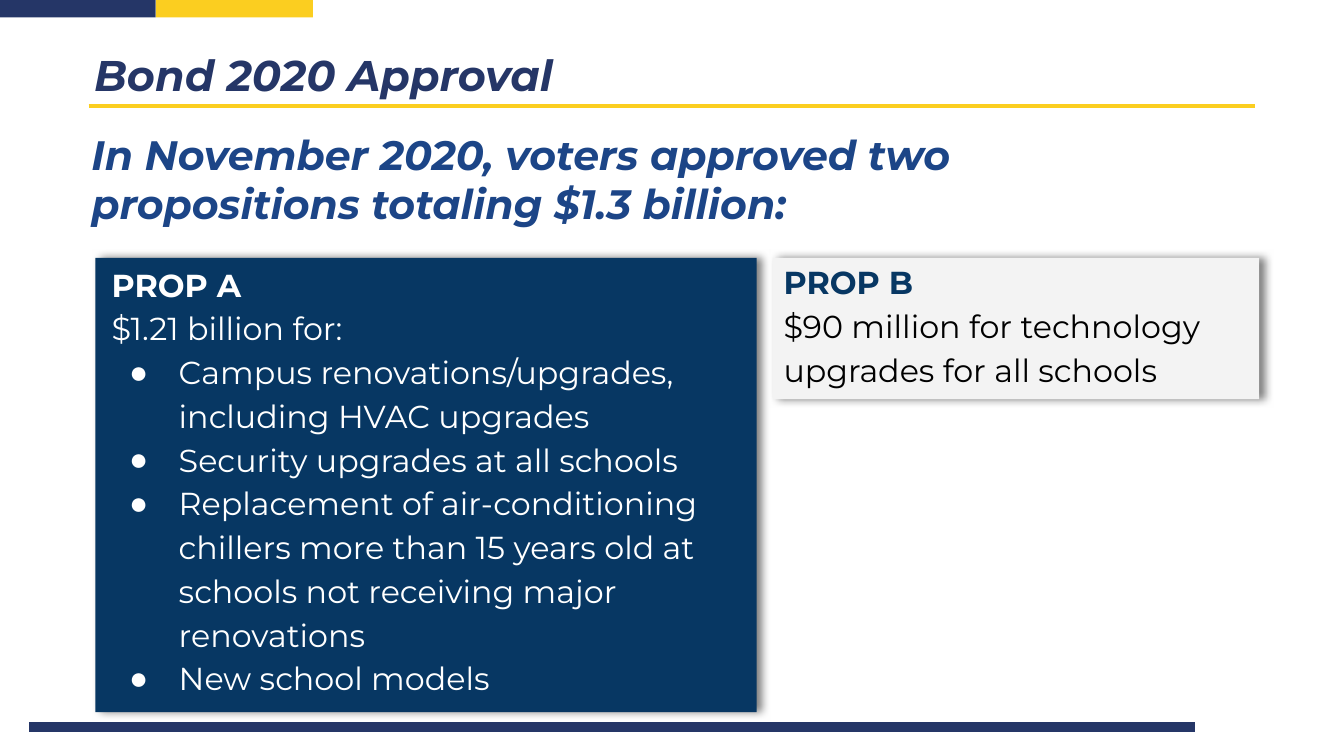
from lxml import etree
from pptx import Presentation
from pptx.dml.color import RGBColor
from pptx.enum.shapes import MSO_CONNECTOR, MSO_SHAPE
from pptx.enum.text import MSO_ANCHOR, MSO_AUTO_SIZE, PP_ALIGN
from pptx.oxml.ns import qn
from pptx.util import Pt

RECTANGLE = MSO_SHAPE.RECTANGLE
STRAIGHT = MSO_CONNECTOR.STRAIGHT
TOP, MIDDLE = MSO_ANCHOR.TOP, MSO_ANCHOR.MIDDLE
NO_AUTOFIT = MSO_AUTO_SIZE.NONE
LEFT = PP_ALIGN.LEFT

FONT = "Montserrat"
INDIGO, YELLOW, BLUE = "253667", "FBCE20", "1C4587"
NAVY, PALE, WHITE, BLACK = "073763", "F3F3F3", "FFFFFF", "000000"


def color(value):
    return RGBColor.from_string(value)


def add_paragraph(frame, text, size, value, bold=False, italic=False, spacing=1.0, bullet=False):
    """Fill the frame's empty first paragraph, or append another one."""
    para = frame.paragraphs[0]
    if para.runs:
        para = frame.add_paragraph()
    para.alignment = LEFT
    para.line_spacing = spacing
    para.space_before = Pt(0)
    properties = para._p.get_or_add_pPr()
    properties.set("marL", str(Pt(36 if bullet else 0)))
    properties.set("indent", str(Pt(-26.6 if bullet else 0)))
    if bullet:
        bullet_color = etree.SubElement(properties, qn("a:buClr"))
        etree.SubElement(bullet_color, qn("a:srgbClr"), val=value)
        etree.SubElement(properties, qn("a:buChar"), char="●")
    else:
        etree.SubElement(properties, qn("a:buNone"))
    span = para.add_run()
    span.text = text
    span.font.name = FONT
    span.font.size = Pt(size)
    span.font.bold = bold
    span.font.italic = italic
    span.font.color.rgb = color(value)


deck = Presentation()
deck.slide_width, deck.slide_height = Pt(720), Pt(405)
page = deck.slides.add_slide(deck.slide_layouts[1])
title, prop_a = page.placeholders

# Footer bar and title underline
for left, right, top, width, value in [(15.8, 640, 389.5, 5, INDIGO), (47.5, 672.5, 56.9, 2, YELLOW)]:
    rule = page.shapes.add_connector(STRAIGHT, Pt(left), Pt(top), Pt(right), Pt(top))
    rule.line.color.rgb = color(value)
    rule.line.width = Pt(width)
    etree.SubElement(rule._element.spPr, qn("a:effectLst"))

# Corner bands, then the two proposition cards with a soft shadow
for left, top, width, height, value, shadowed in [
    (-0.7, 0, 84.2, 9.4, INDIGO, False),
    (83.5, 0, 84.2, 9.4, YELLOW, False),
    (414, 138.2, 260.6, 75.6, PALE, True),
    (51.1, 138.2, 354.2, 243.4, NAVY, True),
]:
    block = page.shapes.add_shape(RECTANGLE, Pt(left), Pt(top), Pt(width), Pt(height))
    block.shadow.inherit = False
    block.fill.solid()
    block.fill.fore_color.rgb = color(value)
    block.line.fill.background()
    if shadowed:
        effects = block._element.spPr.find(qn("a:effectLst"))
        shadow = etree.SubElement(effects, qn("a:outerShdw"), blurRad=str(Pt(4.5)),
                                  dist=str(Pt(3)), dir="0", algn="bl", rotWithShape="0")
        shade = etree.SubElement(shadow, qn("a:srgbClr"), val=BLACK)
        etree.SubElement(shade, qn("a:alpha"), val="50000")

# Text boxes stand in front of the cards
heading = page.shapes.add_textbox(0, 0, 0, 0)
prop_b = page.shapes.add_textbox(0, 0, 0, 0)
for box, left, top, width, height, anchor, inset in [
    (title, 47.5, 24.5, 624.2, 31, TOP, (2.9, 1.44)),
    (heading, 47.5, 67.7, 540, 57, TOP, (1.44, 1.44)),
    (prop_a, 58.3, 137.7, 349.2, 242, TOP, (1.44, 1.44)),
    (prop_b, 418.3, 137.5, 251.3, 71.3, MIDDLE, (1.44, 1.44)),
]:
    box.left, box.top, box.width, box.height = Pt(left), Pt(top), Pt(width), Pt(height)
    box.element.getparent().append(box.element)
    frame = box.text_frame
    frame.word_wrap = True
    frame.auto_size = NO_AUTOFIT
    frame.vertical_anchor = anchor
    frame.margin_left = frame.margin_right = Pt(inset[0])
    frame.margin_top = frame.margin_bottom = Pt(inset[1])

add_paragraph(title.text_frame, "Bond 2020 Approval", 23, INDIGO, bold=True, italic=True)
add_paragraph(heading.text_frame,
              "In November 2020, voters approved two propositions totaling $1.3 billion:",
              22, BLUE, bold=True, italic=True)

for text, value, bold, bullet in [
    ("PROP A", WHITE, True, False),
    ("$1.21 billion for:", WHITE, False, False),
    ("Campus renovations/upgrades, including HVAC upgrades", WHITE, False, True),
    ("Security upgrades at all schools", WHITE, False, True),
    ("Replacement of air-conditioning chillers more than 15 years old at schools "
     "not receiving major renovations", WHITE, False, True),
    ("New school models", WHITE, False, True),
]:
    add_paragraph(prop_a.text_frame, text, 17, value, bold, spacing=1.15, bullet=bullet)

for text, value, bold in [
    ("PROP B", NAVY, True),
    ("$90 million for technology upgrades for all schools", BLACK, False),
]:
    add_paragraph(prop_b.text_frame, text, 17, value, bold, spacing=1.15)

deck.save("out.pptx")
